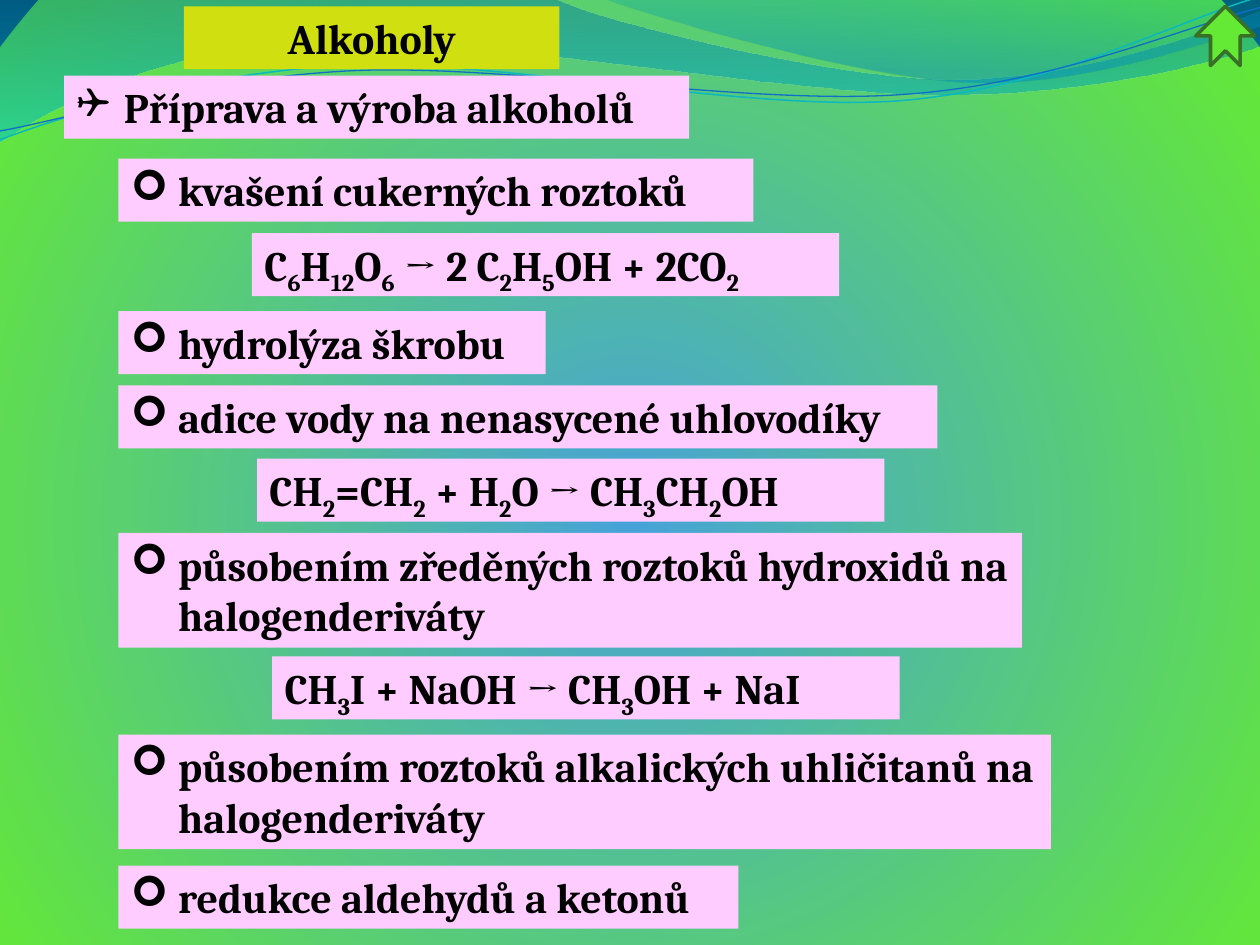
import dataclasses
import math

import pptx
import pptx.dml.color
import pptx.enum.shapes
import pptx.enum.text
import pptx.oxml
import pptx.oxml.ns
import pptx.util
from pptx.util import Inches

qn = pptx.oxml.ns.qn
NS = pptx.oxml.ns.nsdecls("a")
UNITS = 1000  # path units to the inch


@dataclasses.dataclass(frozen=True)
class Theme:
    font: str = "Cambria"
    bullet_font: str = "Wingdings"
    size: int = 24
    text: str = "000000"
    title: str = "D0DF0F"
    panel: str = "FFCCFF"
    green: str = "64E935"
    arrow_line: str = "387026"
    teal_line: str = "0AB8BF"
    blue_line: str = "0F6FC6"
    # gradient stops: position %, colour, opacity %
    glow: tuple = ((0, "47A2D9", 100), (100, "64E935", 100), (100, "00486C", 100))
    wide_wave: tuple = ((0, "0074A1", 45), (100, "00C6CF", 55))
    right_wave: tuple = ((0, "00A1A9", 30), (80, "008BBF", 45))


def rgb(value):
    return pptx.dml.color.RGBColor.from_string(value)


def gradient(stops, direction):
    gs = "".join(
        f'<a:gs pos="{pos * 1000}"><a:srgbClr val="{color}">'
        f'<a:alpha val="{alpha * 1000}"/></a:srgbClr></a:gs>'
        for pos, color, alpha in stops)
    return pptx.oxml.parse_xml(
        f'<a:gradFill {NS} rotWithShape="1"><a:gsLst>{gs}</a:gsLst>{direction}</a:gradFill>')


def curve_path(frame, rotation, segments, closed):
    """Path of points (2 numbers) and cubic curves (6 numbers), as seen once rotated."""
    left, top, width, height = frame
    cos, sin = math.cos(math.radians(rotation)), math.sin(math.radians(rotation))

    def point(x, y):
        dx, dy = x - left - width / 2, y - top - height / 2
        px = dx * cos + dy * sin + width / 2
        py = dy * cos - dx * sin + height / 2
        return f'<a:pt x="{round(px * UNITS)}" y="{round(py * UNITS)}"/>'

    body = ""
    for i, seg in enumerate(segments):
        tag = "moveTo" if i == 0 else "lnTo" if len(seg) == 2 else "cubicBezTo"
        pts = "".join(point(*seg[j:j + 2]) for j in range(0, len(seg), 2))
        body += f"<a:{tag}>{pts}</a:{tag}>"
    return pptx.oxml.parse_xml(
        f'<a:path {NS} w="{round(width * UNITS)}" h="{round(height * UNITS)}">'
        f'{body}{"<a:close/>" if closed else ""}</a:path>')


class SlideBuilder:
    def __init__(self, slide, theme):
        self.s = slide
        self.theme = theme

    def background(self):
        self.s.background.fill.solid()
        bg_pr = self.s._element.find(".//" + qn("p:bgPr"))
        glow = gradient(self.theme.glow, '<a:path path="circle"><a:fillToRect '
                        'l="10000" t="110000" r="10000" b="100000"/></a:path>')
        bg_pr.replace(bg_pr.find(qn("a:solidFill")), glow)

    def wave(self, frame, segments, stops=None, line=None, width=0.75, rotation=0):
        left, top, w, h = frame
        fb = self.s.shapes.build_freeform(round(left * UNITS), round(top * UNITS),
                                          scale=Inches(1) / UNITS)
        fb.add_line_segments([(round((left + w) * UNITS), round((top + h) * UNITS))])
        sp = fb.convert_to_shape()
        sp.rotation = rotation
        sp.shadow.inherit = False
        sp.fill.background()
        sp_pr = sp._element.spPr
        frame_path = sp_pr.find(".//" + qn("a:path"))
        frame_path.getparent().replace(
            frame_path, curve_path(frame, rotation, segments, stops is not None))
        if stops:
            sp.line.fill.background()
            sp_pr.replace(sp_pr.find(qn("a:noFill")),
                          gradient(stops, '<a:lin ang="5400000" scaled="1"/>'))
        else:
            sp.line.color.rgb = rgb(line)
            sp.line.width = pptx.util.Pt(width)

    def panel(self, text, left, top, width, height=0.5, fill=None, bullet=None, align=None):
        """Filled text box; parts of the text between ~ signs are subscripts."""
        sp = self.s.shapes.add_textbox(*map(Inches, (left, top, width, height)))
        sp.fill.solid()
        sp.fill.fore_color.rgb = rgb(fill or self.theme.panel)
        tf = sp.text_frame
        tf.word_wrap = True
        tf.auto_size = pptx.enum.text.MSO_AUTO_SIZE.SHAPE_TO_FIT_TEXT
        p = tf.paragraphs[0]
        if bullet:
            p_pr = p._p.get_or_add_pPr()
            indent = Inches(0.375)
            p_pr.set("marL", str(indent))
            p_pr.set("indent", str(-indent))
            for xml in (f'<a:buFont {NS} typeface="{self.theme.bullet_font}"/>',
                        f'<a:buChar {NS} char="{bullet}"/>'):
                p_pr.append(pptx.oxml.parse_xml(xml))
        p.alignment = align
        style = {"name": self.theme.font, "size": pptx.util.Pt(self.theme.size), "bold": True}
        for i, part in enumerate(text.split("~")):
            if not part:
                continue
            r = p.add_run()
            r.text = part
            for name, value in style.items():
                setattr(r.font, name, value)
            r.font.color.rgb = rgb(self.theme.text)
            if i % 2:
                r.font._element.set("baseline", "-25000")

    def up_arrow(self, left, top, size):
        sp = self.s.shapes.add_shape(pptx.enum.shapes.MSO_SHAPE.NOTCHED_RIGHT_ARROW,
                                     *map(Inches, (left, top, size, size)))
        sp.rotation = 270
        sp.shadow.inherit = False
        sp.fill.solid()
        sp.fill.fore_color.rgb = rgb(self.theme.green)
        sp.line.color.rgb = rgb(self.theme.arrow_line)
        sp.line.width = pptx.util.Pt(2)


def main():
    prs = pptx.Presentation()
    prs.slide_width, prs.slide_height = Inches(10), Inches(7.5)
    theme = Theme()
    b = SlideBuilder(prs.slides.add_slide(prs.slide_layouts[6]), theme)

    b.background()
    b.wave((-0.01, -0.01, 10.02, 1.14),
           [(0, 0), (4.4, -0.01), (4.76, 0.17, 6.64, 0.63, 7.58, 0.63),
            (8.53, 0.63, 9.58, 0.26, 10, 0.09), (10.01, 0.36),
            (9.83, 0.44, 8.7, 0.76, 7.46, 0.75), (6.22, 0.75, 3.82, 0.28, 2.57, 0.34),
            (1.29, 0.36, 0.46, 0.83, -0.01, 1.13), (0, 0)], stops=theme.wide_wave)
    b.wave((4.79, -0.01, 5.21, 0.7),
           [(4.79, -0.01), (5.09, 0.11, 6.82, 0.62, 7.69, 0.65),
            (8.56, 0.69, 9.61, 0.32, 10, 0.21), (10, 0), (4.79, -0.01)],
           stops=theme.right_wave)
    b.wave((-0.02, 0.22, 10.02, 0.71),
           [(0, 1.11), (0.48, 0.93, 1.58, 0.57, 2.77, 0.52),
            (3.95, 0.47, 5.93, 0.89, 7.13, 0.8), (8.33, 0.71, 9.38, 0.15, 9.98, -0.02)],
           line=theme.teal_line, width=0.85, rotation=357.3)
    b.wave((-0.02, 0.3, 10.03, 0.58),
           [(0, 1.04), (0.47, 0.96, 1.64, 0.61, 2.83, 0.56),
            (4.03, 0.51, 5.97, 0.84, 7.17, 0.75), (8.36, 0.67, 9.41, 0.21, 10, 0.06)],
           line=theme.blue_line, rotation=357.3)

    b.panel("Alkoholy", 1.46, 0.05, 2.98, fill=theme.title,
            align=pptx.enum.text.PP_ALIGN.CENTER)
    b.panel("Příprava a výroba alkoholů", 0.51, 0.6, 4.96, bullet="❑")

    methods = [
        ("kvašení cukerných roztoků", 1.26, 5.04, 0.5),
        ("hydrolýza škrobu", 2.47, 3.39, 0.5),
        ("působením roztoků alkalických uhličitanů na halogenderiváty", 5.83, 7.4, 0.91),
        ("působením zředěných roztoků hydroxidů na halogenderiváty", 4.23, 7.17, 0.91),
        ("adice vody na nenasycené uhlovodíky", 3.06, 6.5, 0.5),
        ("redukce aldehydů a ketonů", 6.87, 4.92, 0.5),
    ]
    for text, top, width, height in methods:
        b.panel(text, 0.94, top, width, height, bullet="➢")

    equations = [
        ("C~6~H~12~O~6~ → 2 C~2~H~5~OH + 2CO~2~", 2, 1.85, 4.66),
        ("CH~2~=CH~2~ + H~2~O → CH~3~CH~2~OH", 2.04, 3.64, 4.98),
        ("CH~3~I + NaOH → CH~3~OH + NaI", 2.16, 5.21, 4.98),
    ]
    for text, left, top, width in equations:
        b.panel(text, left, top, width)

    b.up_arrow(9.49, 0.05, 0.47)
    prs.save("out.pptx")


if __name__ == "__main__":
    main()
